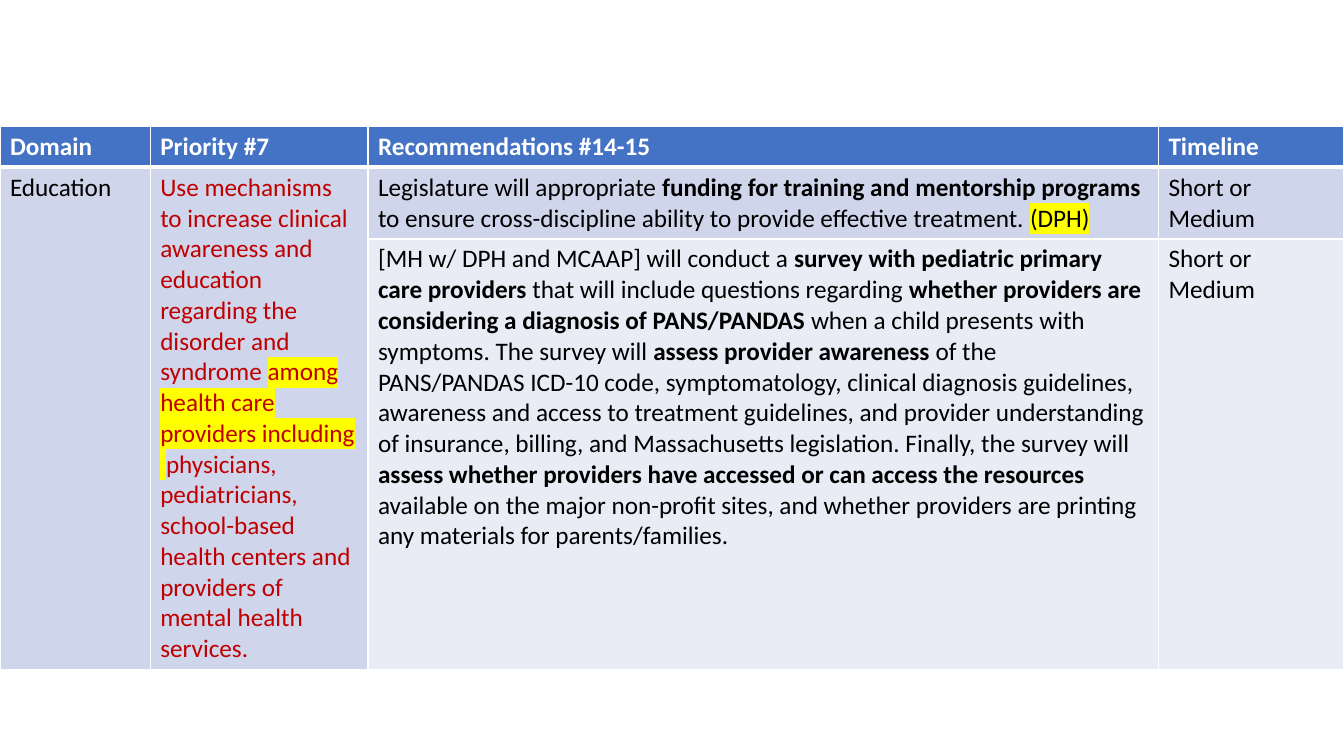
from lxml.etree import SubElement
from pptx import Presentation
from pptx.dml.color import RGBColor
from pptx.oxml.ns import qn
from pptx.util import Inches, Pt

COLORS = {
    "header": "4472C4",
    "band_dark": "CFD5EA",
    "band_light": "E9EBF5",
    "white": "FFFFFF",
    "black": "000000",
    "priority": "C00000",
    "highlight": "FFFF00",
}
FONT = "Calibri"
COLUMN_WIDTHS = [1.49, 2.16, 7.84, 1.84]
ROW_HEIGHTS = [0.41, 0.71, 4.26]
ROW_FILLS = ["header", "band_dark", "band_light"]

# Each cell is a list of runs: (text, style), style being "", "bold" or "mark"
HEADINGS = ["Domain", "Priority #7", "Recommendations #14-15", "Timeline"]
DOMAIN = [("Education", "")]
PRIORITY = [
    ("Use mechanisms to increase clinical awareness and education regarding "
     "the disorder and syndrome ", ""),
    ("among health care providers including  ", "mark"),
    ("physicians, pediatricians, school-based health centers and providers of "
     "mental health services.", ""),
]
FUNDING = [
    ("Legislature will appropriate ", ""),
    ("funding for training and mentorship programs", "bold"),
    (" to ensure cross-discipline ability to provide effective treatment. ", ""),
    ("(DPH)", "mark"),
]
SURVEY = [
    ("[MH w/ DPH and MCAAP] will conduct a ", ""),
    ("survey with pediatric primary care providers", "bold"),
    (" that will include questions regarding ", ""),
    ("whether providers are considering a diagnosis of PANS/PANDAS ", "bold"),
    ("when a child presents with symptoms. The survey will ", ""),
    ("assess provider awareness", "bold"),
    (" of the PANS/PANDAS ICD-10 code, symptomatology, clinical diagnosis "
     "guidelines, awareness and access to treatment guidelines, and provider "
     "understanding of insurance, billing, and Massachusetts legislation. "
     "Finally, the survey will ", ""),
    ("assess whether providers have accessed or can access the resources", "bold"),
    (" available on the major non-profit sites, and whether providers are "
     "printing any materials for parents/families. ", ""),
]
TIMELINE = [("Short or Medium", "")]


def highlight_run(run):
    """Mark a run whose colour is already set."""
    properties = run.font._element
    highlight = SubElement(properties, qn("a:highlight"))
    SubElement(highlight, qn("a:srgbClr"), val=COLORS["highlight"])
    properties.find(qn("a:solidFill")).addnext(highlight)


def write_runs(cell, runs, color):
    paragraph = cell.text_frame.paragraphs[0]
    for text, style in runs:
        run = paragraph.add_run()
        run.text = text
        run.font.size = Pt(18)
        run.font.bold = style == "bold"
        run.font.color.rgb = RGBColor.from_string(COLORS[color])
        if style == "mark":
            highlight_run(run)
        run.font.name = FONT


def style_cell(cell, fill, top=1, bottom=1):
    """White borders, widths in points, then a solid fill."""
    properties = cell._tc.get_or_add_tcPr()
    for side, width in (("L", 1), ("R", 1), ("T", top), ("B", bottom)):
        line = SubElement(properties, qn(f"a:ln{side}"), w=str(Pt(width)))
        line_fill = SubElement(line, qn("a:solidFill"))
        SubElement(line_fill, qn("a:srgbClr"), val=COLORS["white"])
    cell.fill.solid()
    cell.fill.fore_color.rgb = RGBColor.from_string(COLORS[fill])


def add_grid(slide):
    grid = slide.shapes.add_table(
        len(ROW_HEIGHTS), len(COLUMN_WIDTHS), Inches(0), Inches(1.25),
        Inches(sum(COLUMN_WIDTHS)), Inches(sum(ROW_HEIGHTS))).table
    for column, width in zip(grid.columns, COLUMN_WIDTHS):
        column.width = Inches(width)
    for row, height in zip(grid.rows, ROW_HEIGHTS):
        row.height = Inches(height)

    # Domain and priority span both recommendations
    for column in (0, 1):
        grid.cell(1, column).merge(grid.cell(2, column))
    for index, row in enumerate(grid.rows):
        for cell in row.cells:
            fill = "band_dark" if cell.is_spanned else ROW_FILLS[index]
            style_cell(cell, fill, top=3 if index == 1 else 1,
                       bottom=3 if index == 0 else 1)
    return grid


def main():
    presentation = Presentation()
    presentation.slide_width = Inches(13.33)
    presentation.slide_height = Inches(7.5)
    slide = presentation.slides.add_slide(presentation.slide_layouts[6])
    grid = add_grid(slide)

    # Header row
    for column, heading in enumerate(HEADINGS):
        write_runs(grid.cell(0, column), [(heading, "bold")], "white")

    # Domain and priority
    write_runs(grid.cell(1, 0), DOMAIN, "black")
    write_runs(grid.cell(1, 1), PRIORITY, "priority")

    # Recommendations with their timelines
    for row, recommendation in enumerate((FUNDING, SURVEY), start=1):
        write_runs(grid.cell(row, 2), recommendation, "black")
        write_runs(grid.cell(row, 3), TIMELINE, "black")

    presentation.save("out.pptx")


if __name__ == "__main__":
    main()
